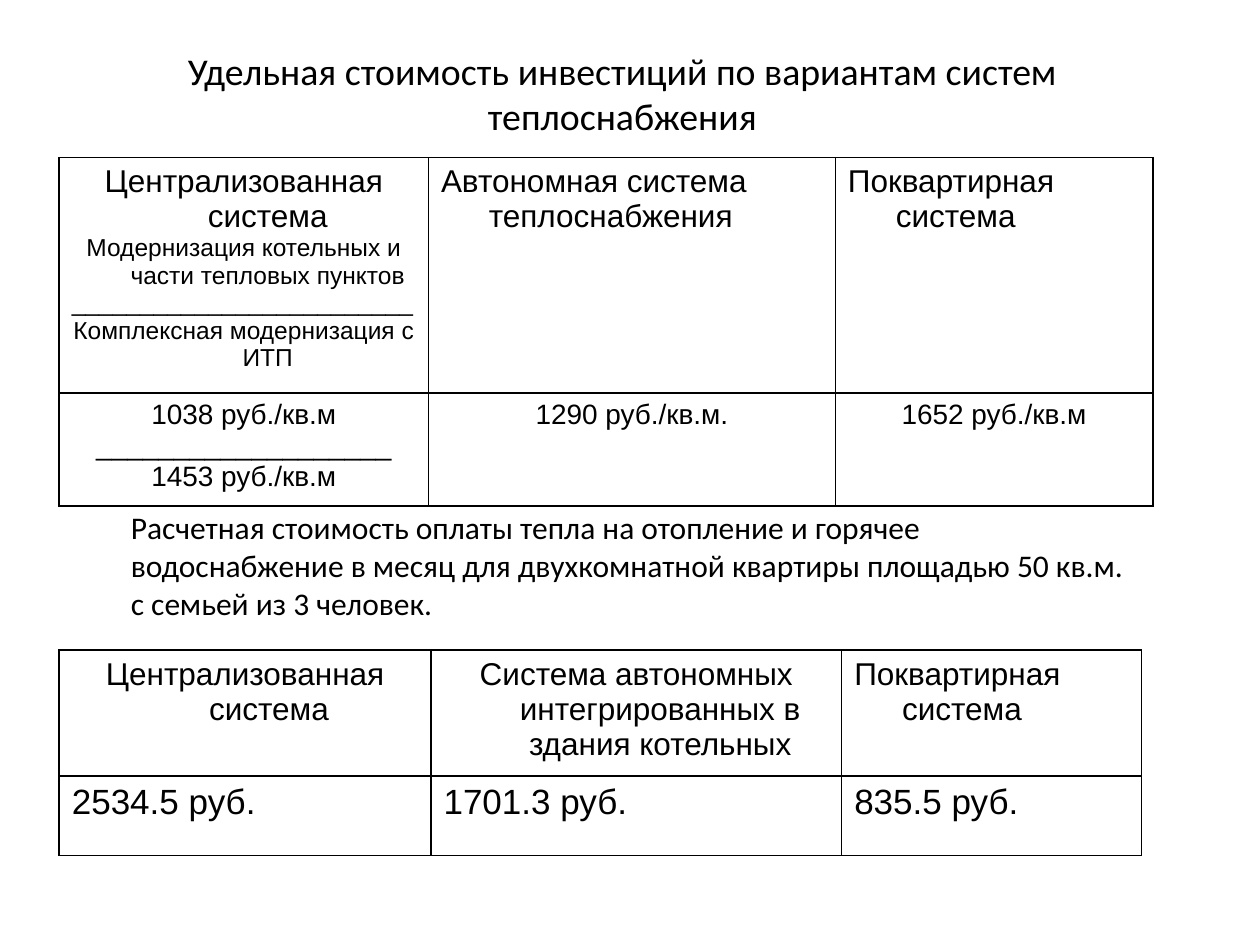
"""Build a slide comparing investment and heating costs by heat supply system."""
import dataclasses

import lxml.etree
import pptx
import pptx.dml.color
import pptx.enum.text
import pptx.oxml.ns
import pptx.util

Inches = pptx.util.Inches
Pt = pptx.util.Pt
LEFT = pptx.enum.text.PP_ALIGN.LEFT
CENTER = pptx.enum.text.PP_ALIGN.CENTER


@dataclasses.dataclass(frozen=True)
class Theme:
    ink: str = "000000"
    text_font: str = "Calibri"
    table_font: str = "Arial"
    title: float = 21.6
    heading: int = 18
    detail: int = 14
    cost: int = 16
    payment: int = 20
    border: int = 1
    hanging: float = 0.38


THEME = Theme()

TEXTS = [
    ("Удельная стоимость инвестиций по вариантам систем теплоснабжения",
     (0.5, 0.3, 8.88, 0.87), THEME.title, CENTER),
    ("Расчетная стоимость оплаты тепла на отопление и горячее водоснабжение в месяц "
     "для двухкомнатной квартиры площадью 50 кв.м. с семьей из 3 человек.",
     (0.94, 3.98, 8.16, 1.01), THEME.heading, LEFT),
]

INVESTMENT = {
    "origin": (0.47, 1.25),
    "columns": (2.93, 3.23, 2.52),
    "rows": (1.75, 0.84),
    "cells": [
        [
            [("Централизованная система", THEME.heading, CENTER),
             ("Модернизация котельных и части тепловых пунктов", THEME.detail, CENTER),
             ("_" * 25, THEME.detail, LEFT),
             ("Комплексная модернизация с ИТП", THEME.detail, CENTER)],
            [("Автономная система теплоснабжения", THEME.heading, LEFT)],
            [("Поквартирная система", THEME.heading, LEFT)],
        ],
        [
            [("1038 руб./кв.м", THEME.cost, CENTER),
             ("_" * 19, THEME.cost, CENTER),
             ("1453 руб./кв.м", THEME.cost, CENTER)],
            [("1290 руб./кв.м.", THEME.cost, CENTER)],
            [("1652 руб./кв.м", THEME.cost, CENTER)],
        ],
    ],
}

MONTHLY_PAYMENT = {
    "origin": (0.47, 5.16),
    "columns": (2.95, 3.26, 2.38),
    "rows": (1.0, 0.63),
    "cells": [
        [
            [("Централизованная система", THEME.heading, CENTER)],
            [("Система автономных интегрированных в здания котельных",
              THEME.heading, CENTER)],
            [("Поквартирная система", THEME.heading, LEFT)],
        ],
        [[(payment, THEME.payment, LEFT)]
         for payment in ("2534.5 руб.", "1701.3 руб.", "835.5 руб.")],
    ],
}


def write_paragraph(paragraph, text, size, alignment, font_name):
    paragraph.text = text
    paragraph.alignment = alignment
    for run in paragraph.runs:
        run.font.size = Pt(size)
        run.font.name = font_name
        run.font.color.rgb = pptx.dml.color.RGBColor.from_string(THEME.ink)


def add_text(slide, text, box, size, alignment):
    shape = slide.shapes.add_textbox(*map(Inches, box))
    text_frame = shape.text_frame
    text_frame.word_wrap = True
    text_frame.vertical_anchor = pptx.enum.text.MSO_ANCHOR.MIDDLE
    write_paragraph(text_frame.paragraphs[0], text, size, alignment, THEME.text_font)


def set_hanging_indent(paragraph):
    properties = paragraph._p.get_or_add_pPr()
    properties.set("marL", str(Inches(THEME.hanging)))
    properties.set("indent", str(-Inches(THEME.hanging)))


def add_borders(cell):
    qualified = pptx.oxml.ns.qn
    properties = cell._tc.get_or_add_tcPr()
    for position, side in enumerate(("lnL", "lnR", "lnT", "lnB")):
        line = lxml.etree.Element(qualified(f"a:{side}"), w=str(Pt(THEME.border)))
        fill = lxml.etree.SubElement(line, qualified("a:solidFill"))
        lxml.etree.SubElement(fill, qualified("a:srgbClr"), val=THEME.ink)
        properties.insert(position, line)


def fill_cell(cell, lines):
    cell.fill.background()
    add_borders(cell)
    text_frame = cell.text_frame
    text_frame.text = "\n".join(text for text, _, _ in lines)
    for paragraph, (text, size, alignment) in zip(text_frame.paragraphs, lines):
        write_paragraph(paragraph, text, size, alignment, THEME.table_font)
        set_hanging_indent(paragraph)


def add_cost_table(slide, content):
    columns, rows = content["columns"], content["rows"]
    box = (*content["origin"], sum(columns), sum(rows))
    table = slide.shapes.add_table(len(rows), len(columns), *map(Inches, box)).table
    table.first_row = False
    table.horz_banding = False
    for column, width in zip(table.columns, columns):
        column.width = Inches(width)
    for row, height, row_cells in zip(table.rows, rows, content["cells"]):
        row.height = Inches(height)
        for cell, lines in zip(row.cells, row_cells):
            fill_cell(cell, lines)


def main():
    presentation = pptx.Presentation()
    presentation.slide_width = Inches(10)
    presentation.slide_height = Inches(7.5)
    slide = presentation.slides.add_slide(presentation.slide_layouts[6])
    for text, box, size, alignment in TEXTS:
        add_text(slide, text, box, size, alignment)
    for content in (INVESTMENT, MONTHLY_PAYMENT):
        add_cost_table(slide, content)
    presentation.save("out.pptx")


if __name__ == "__main__":
    main()
